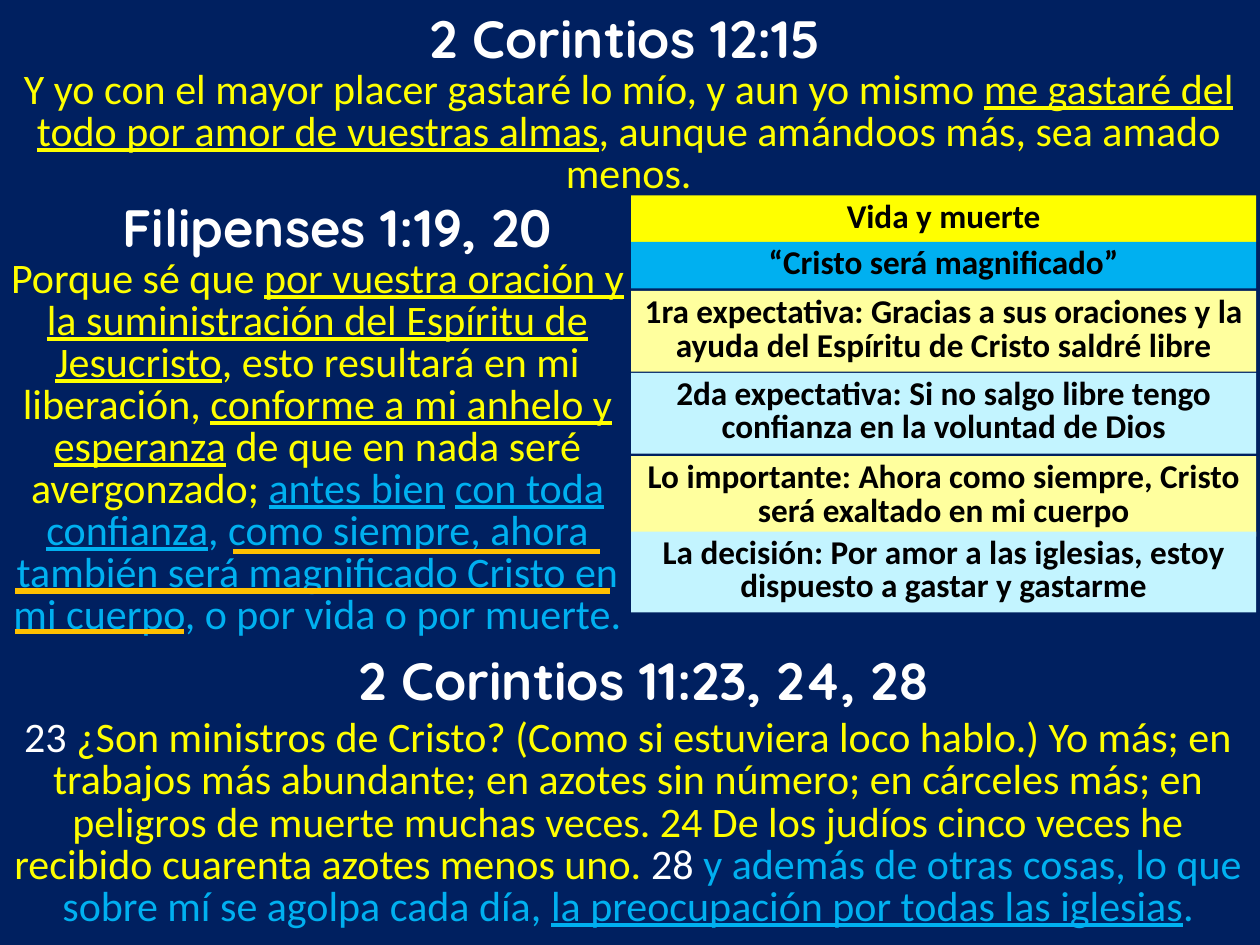
from lxml.etree import SubElement
from pptx import Presentation
from pptx.dml.color import RGBColor
from pptx.enum.shapes import MSO_CONNECTOR, MSO_SHAPE
from pptx.enum.text import MSO_ANCHOR, PP_ALIGN
from pptx.oxml.ns import qn
from pptx.util import Inches, Pt

COLORS = {
    "navy": "002060", "white": "FFFFFF", "black": "000000",
    "yellow": "FFFF00", "blue": "00B0F0", "orange": "FFC000",
    "pale_yellow": "FFFF9E", "pale_blue": "C3F4FF",
}


def color(name):
    return RGBColor.from_string(COLORS[name])


def write(s, runs, size, font="Calibri", bold=False, spacing=None):
    """Fill a shape with one centred paragraph of (text, colour, underline) runs."""
    tf = s.text_frame
    tf.word_wrap = True
    tf.vertical_anchor = MSO_ANCHOR.TOP
    p = tf.paragraphs[0]
    p.alignment = PP_ALIGN.CENTER
    if spacing:
        p.line_spacing = Pt(spacing)
    for text, fill, underline in runs:
        r = p.add_run()
        r.text = text
        r.font.name = font
        r.font.size = Pt(size)
        r.font.bold = bold
        r.font.underline = underline
        r.font.color.rgb = color(fill)
    return p


def add_box(slide, left, top, width, height):
    return slide.shapes.add_textbox(Inches(left), Inches(top), Inches(width), Inches(height))


def add_heading(slide, box, text):
    write(add_box(slide, *box), [(text, "white", False)], 30, "Quicksand", bold=True)


def add_verse(slide, box, runs):
    return write(add_box(slide, *box), runs, 24, spacing=24)


def add_outline(slide, left, width, rows):
    """Stack of coloured bands, each given as (top, height, fill, text)."""
    for top, height, fill, text in rows:
        s = slide.shapes.add_shape(MSO_SHAPE.RECTANGLE, Inches(left), Inches(top),
                                   Inches(width), Inches(height))
        s.shadow.inherit = False
        s.fill.solid()
        s.fill.fore_color.rgb = color(fill)
        s.line.fill.background()
        write(s, [(text, "black", False)], 19, bold=True, spacing=19)


def add_emphasis(slide, lines):
    """Thick horizontal rules, each given as (start, end, y)."""
    for start, end, y in lines:
        s = slide.shapes.add_connector(MSO_CONNECTOR.STRAIGHT, Inches(start), Inches(y),
                                       Inches(end), Inches(y))
        s.line.color.rgb = color("orange")
        s.line.width = Pt(3)
        SubElement(s._element.spPr, qn("a:effectLst"))


def main():
    prs = Presentation()
    prs.slide_width, prs.slide_height = Inches(10), Inches(7.5)
    slide = prs.slides.add_slide(prs.slide_layouts[6])
    slide.background.fill.solid()
    slide.background.fill.fore_color.rgb = color("navy")

    # Opening verse
    add_heading(slide, (2.64, 0, 4.65, 0.61), "2 Corintios 12:15")
    add_verse(slide, (0, 0.51, 9.98, 1.12), [
        ("Y yo con el mayor placer gastaré lo mío, y aun yo mismo ", "yellow", False),
        ("me gastaré del todo por amor de vuestras almas", "yellow", True),
        (", aunque amándoos más, sea amado menos.", "yellow", False),
    ])

    # Main verse, left column
    add_heading(slide, (0.35, 1.5, 4.65, 0.61), "Filipenses 1:19, 20")
    p = add_verse(slide, (-0.04, 2.01, 5.12, 3.13), [
        ("Porque sé que ", "yellow", False),
        ("por vuestra", "yellow", True),
        (" ", "yellow", True),
        ("oración y la suministración del Espíritu de Jesucristo", "yellow", True),
        (", esto resultará en mi liberación, ", "yellow", False),
        ("conforme a mi anhelo y esperanza", "yellow", True),
        (" de que en nada seré avergonzado; ", "yellow", False),
        ("antes bien", "blue", True),
        (" ", "blue", False),
        ("con toda confianza", "blue", True),
        (", como siempre, ahora también será magnificado Cristo en mi cuerpo, "
         "o por vida o por muerte.", "blue", False),
    ])
    # Tighten the space before "oración" so the first line fits
    p.runs[2].font._element.set("spc", "-150")

    # Closing verse
    add_heading(slide, (2.4, 5.09, 5.43, 0.61), "2 Corintios 11:23, 24, 28")
    add_verse(slide, (0, 5.66, 9.97, 1.79), [
        ("23 ", "white", False),
        ("¿Son ministros de Cristo? (Como si estuviera loco hablo.) Yo más; en trabajos "
         "más abundante; en azotes sin número; en cárceles más; en peligros de muerte "
         "muchas veces. 24 De los judíos cinco veces he recibido cuarenta azotes menos "
         "uno. ", "yellow", False),
        ("28 ", "white", False),
        ("y además de otras cosas, lo que sobre mí se agolpa cada día, ", "blue", False),
        ("la preocupación por todas las iglesias", "blue", True),
        (".", "blue", False),
    ])

    # Outline, right column
    add_outline(slide, 5.01, 4.96, [
        (1.55, 0.37, "yellow", "Vida y muerte"),
        (1.92, 0.37, "blue", "“Cristo será magnificado”"),
        (2.31, 0.64, "pale_yellow", "1ra expectativa: Gracias a sus oraciones y la "
                                    "ayuda del Espíritu de Cristo saldré libre"),
        (2.96, 0.64, "pale_blue", "2da expectativa: Si no salgo libre tengo "
                                  "confianza en la voluntad de Dios"),
        (3.62, 0.64, "pale_yellow", "Lo importante: Ahora como siempre, Cristo "
                                    "será exaltado en mi cuerpo"),
        (4.22, 0.64, "pale_blue", "La decisión: Por amor a las iglesias, estoy "
                                  "dispuesto a gastar y gastarme"),
    ])

    # Emphasis under the key phrase of the main verse
    add_emphasis(slide, [(1.85, 4.76, 4.38), (0.12, 4.84, 4.69), (0.12, 1.46, 5.01)])

    prs.save("out.pptx")


if __name__ == "__main__":
    main()
